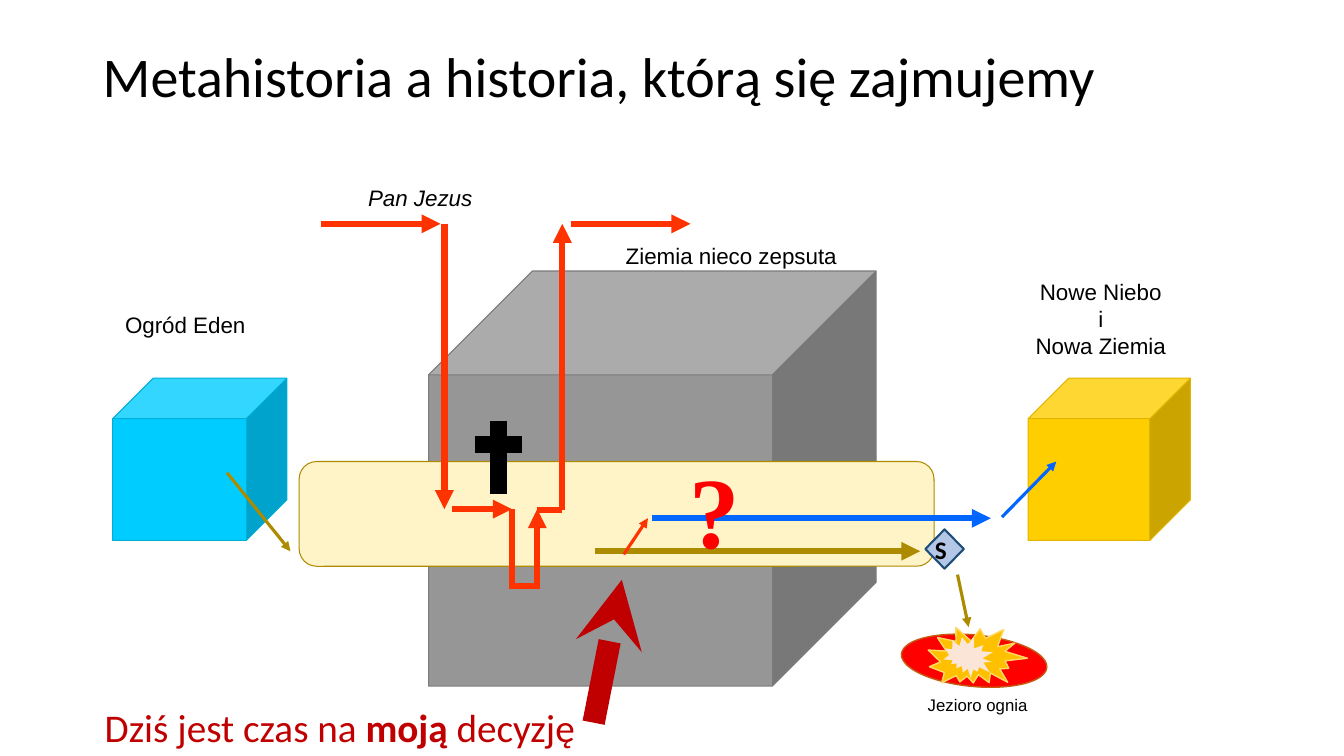
from lxml import etree
from pptx import Presentation, util as u
from pptx.dml.color import RGBColor
from pptx.enum import shapes as sh, text as tx
from pptx.oxml.ns import qn

BLACK = RGBColor(0x00, 0x00, 0x00)
GREY = RGBColor(0x96, 0x96, 0x96)
SLATE = RGBColor(0x7A, 0x7A, 0x7A)
CREAM = RGBColor(0xFF, 0xF4, 0xC7)
OLIVE = RGBColor(0xAD, 0x8B, 0x00)
BLUE = RGBColor(0x00, 0x66, 0xFF)
PALE = RGBColor(0xB4, 0xC7, 0xE7)
NAVY = RGBColor(0x1F, 0x4E, 0x79)
GOLD = RGBColor(0xFF, 0xCE, 0x00)
OCHRE = RGBColor(0xE0, 0xB4, 0x00)
CYAN = RGBColor(0x00, 0xCC, 0xFF)
TEAL = RGBColor(0x00, 0xAE, 0xD8)
RED = RGBColor(0xFF, 0x00, 0x00)
RUST = RGBColor(0xC5, 0x5A, 0x11)
AMBER = RGBColor(0xFF, 0xC0, 0x00)
SAND = RGBColor(0xFF, 0xD9, 0x66)
PEACH = RGBColor(0xFB, 0xE5, 0xD6)
FLAME = RGBColor(0xFF, 0x33, 0x00)
WINE = RGBColor(0xC0, 0x00, 0x00)

KIND = sh.MSO_SHAPE
LEFT, MID = tx.PP_ALIGN.LEFT, tx.PP_ALIGN.CENTER

deck = Presentation()
deck.slide_width, deck.slide_height = u.Cm(33.87), u.Cm(19.05)
slide = deck.slides.add_slide(deck.slide_layouts[6])
items = slide.shapes


def write(frame, words, size, face, color, align, pad, **style):
    frame.word_wrap = True
    frame.vertical_anchor = tx.MSO_ANCHOR.MIDDLE
    for side, gap in zip(("left", "top", "right", "bottom"), pad):
        setattr(frame, "margin_" + side, u.Cm(gap))
    par = frame.paragraphs[0]
    par.alignment = align
    par.text = words
    look = {"size": u.Pt(size), "name": face, **style}
    for run in par.runs:
        for key, val in look.items():
            setattr(run.font, key, val)
        run.font.color.rgb = color
    return par


def stroke(shape, color, width, head):
    shape.line.color.rgb = color
    shape.line.width = u.Pt(width)
    if head:
        etree.SubElement(shape.line._get_or_add_ln(), qn("a:tailEnd"), type=head)


solids = [
    (KIND.CUBE, (10.8, 6.83, 11.28, 10.46), 0, GREY, SLATE, 0.75),
    (KIND.ROUNDED_RECTANGLE, (7.54, 11.63, 16, 2.64), 0, CREAM, OLIVE, 0.75),
    (KIND.DIAMOND, (23.32, 13.34, 0.97, 0.99), 0, PALE, NAVY, 1.5),
    (KIND.CUBE, (25.91, 9.53, 4.09, 4.09), 0, GOLD, OCHRE, 0.75),
    (KIND.CUBE, (2.84, 9.53, 4.39, 4.09), 0, CYAN, TEAL, 0.75),
    (KIND.FLOWCHART_CONNECTOR, (22.71, 16, 3.68, 1.3), 5.4, RED, RUST, 1),
    (KIND.EXPLOSION2, (23.39, 15.7, 2.46, 1.73), 16.2, AMBER, SAND, 1),
    (KIND.EXPLOSION2, (23.83, 16, 1.19, 1.14), 56.2, PEACH, None, 0),
]
for kind, box, turn, fill, edge, width in solids:
    solid = items.add_shape(kind, *map(u.Cm, box))
    solid.shadow.inherit = False
    solid.rotation = turn
    solid.fill.solid()
    solid.fill.fore_color.rgb = fill
    if edge:
        stroke(solid, edge, width, None)
    else:
        solid.line.fill.background()
    if kind == KIND.DIAMOND:
        write(solid.text_frame, "S", 18, "Calibri", BLACK, LEFT,
              (0, 0.1, 0, 0.1), bold=True)

TIP = "triangle"
lines = [
    (14.99, 13.89, 23.19, 13.89, OLIVE, 4.5, TIP),
    (16.43, 13.06, 24.97, 13.06, BLUE, 4.5, TIP),
    (24.13, 14.48, 24.41, 15.8, OLIVE, 2.25, TIP),
    (25.25, 13.03, 26.62, 11.63, BLUE, 2.25, TIP),
    (5.72, 11.91, 7.32, 13.89, OLIVE, 2.25, TIP),
    (14.17, 12.85, 14.17, 5.64, FLAME, 4.5, TIP),
    (11.4, 12.83, 12.9, 12.83, FLAME, 4.5, TIP),
    (12.9, 12.83, 12.9, 14.83, FLAME, 4.5, None),
    (12.9, 14.76, 13.54, 14.76, FLAME, 4.5, None),
    (13.54, 14.83, 13.54, 12.83, FLAME, 4.5, TIP),
    (13.54, 12.85, 14.17, 12.85, FLAME, 4.5, None),
    (11.2, 5.64, 11.2, 12.83, FLAME, 4.5, TIP),
    (14.38, 5.64, 17.4, 5.64, FLAME, 4.5, TIP),
    (8.08, 5.64, 11.1, 5.64, FLAME, 4.5, TIP),
    (14.96, 18.21, 15.67, 14.61, WINE, 16, "stealth"),
    (11.96, 11.2, 13.16, 11.2, BLACK, 12, None),
    (12.57, 12.45, 12.57, 10.62, BLACK, 12, None),
]
for *ends, color, width, head in lines:
    line = items.add_connector(sh.MSO_CONNECTOR.STRAIGHT, *map(u.Cm, ends))
    stroke(line, color, width, head)
    etree.SubElement(line._element.spPr, qn("a:effectLst"))

pen = items.build_freeform(u.Cm(15.72), u.Cm(13.97))
pen.add_line_segments([(u.Cm(16.33), u.Cm(13.06))], close=False)
spark = pen.convert_to_shape()
spark.fill.background()
stroke(spark, FLAME, 2.25, TIP)
spark.shadow.inherit = False

SLIM, WIDE = (0.08,) * 4, (0.25, 0.13, 0.25, 0.13)
labels = [
    ((22.81, 17.42, 3.66, 0.66), "Jezioro ognia", 12, {}),
    ((25.91, 6.93, 3.66, 2.21), "Nowe Niebo\vi\vNowa Ziemia", 16, {}),
    ((2.84, 7.77, 3.66, 0.84), "Ogród Eden", 16, {}),
    ((8.76, 4.57, 3.66, 0.84), "Pan Jezus", 16, {"italic": True}),
    ((15.52, 6.02, 5.82, 0.84), "Ziemia nieco zepsuta", 16, {}),
]
for box, words, size, style in labels:
    label = items.add_textbox(*map(u.Cm, box))
    write(label.text_frame, words, size, "Arial", BLACK, MID, SLIM, **style)

title = items.add_textbox(*map(u.Cm, (2.34, 1.02, 29.21, 1.98)))
head = write(title.text_frame, "Metahistoria a historia, którą się zajmujemy",
             40, "Calibri", BLACK, LEFT, WIDE)
head.line_spacing = 0.9

query = items.add_textbox(*map(u.Cm, (17.12, 11.15, 1.85, 3.33)))
write(query.text_frame, "?", 72, "Times New Roman", RED, LEFT, WIDE, bold=True)

call = items.add_textbox(*map(u.Cm, (2.39, 17.58, 12.6, 1.45)))
plea = write(call.text_frame, "Dziś jest czas na ", 28, "Calibri", WINE, LEFT, WIDE)
for words, bold in (("moją", True), (" decyzję", False)):
    run = plea.add_run()
    run.text = words
    for key, val in {"size": u.Pt(28), "name": "Calibri", "bold": bold}.items():
        setattr(run.font, key, val)
    run.font.color.rgb = WINE

deck.save("out.pptx")
